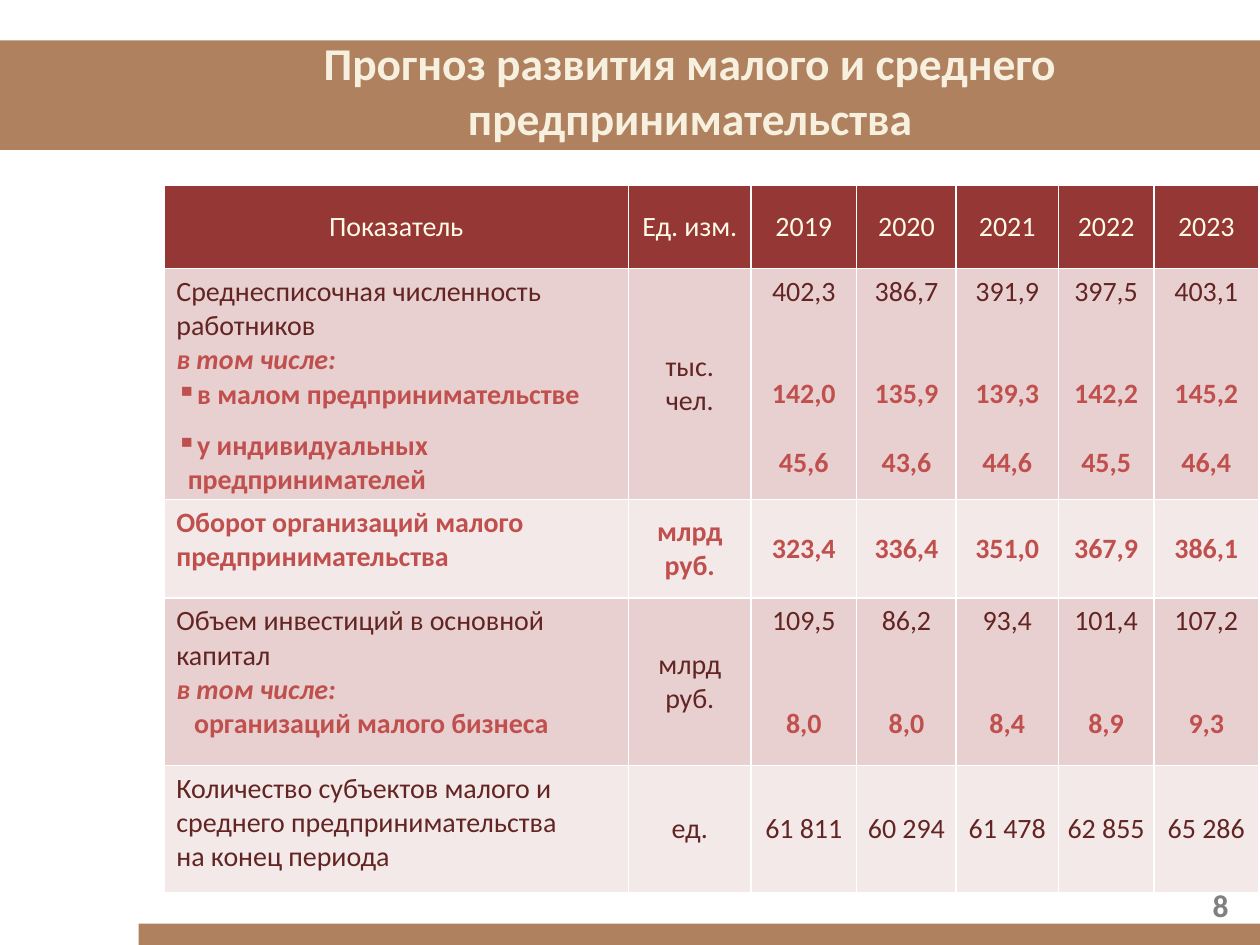
from lxml.etree import SubElement
from pptx import Presentation
from pptx.dml.color import RGBColor
from pptx.enum.shapes import MSO_SHAPE
from pptx.enum.text import MSO_ANCHOR, PP_ALIGN
from pptx.oxml.ns import qn
from pptx.util import Inches, Pt

SAND = RGBColor(0xAF, 0x81, 0x5F)
CREAM = RGBColor(0xF7, 0xF0, 0xDE)
GREY = RGBColor(0x80, 0x80, 0x80)
IVORY = RGBColor(0xFD, 0xFA, 0xE7)
MAROON = RGBColor(0x95, 0x37, 0x35)
DARK_RED = RGBColor(0x63, 0x25, 0x23)
RED = RGBColor(0xC0, 0x50, 0x4D)
ROSE = RGBColor(0xE8, 0xD0, 0xD0)
PALE_ROSE = RGBColor(0xF4, 0xE9, 0xE9)
WHITE = RGBColor(0xFF, 0xFF, 0xFF)

# The slide is a grid of 100 columns by 75 rows of equal squares.
SLIDE_WIDTH, SLIDE_HEIGHT = Inches(10), Inches(7.5)
GRID = SLIDE_WIDTH / 100

TITLE = {"size": Pt(26), "bold": True, "color": CREAM}
PAGE_NUMBER = {"size": Pt(18), "bold": True, "color": GREY}
HEADER = {"size": Pt(16), "color": IVORY}
TOTAL = {"size": Pt(16), "color": DARK_RED}
PART = {"size": Pt(16), "bold": True, "color": RED}
NOTE = PART | {"italic": True}

LINE = 19.5  # points taken by one line of table text
BULLET = {"left": 0.9, "first": -0.9, "bullet": "▪"}
COLUMN_WIDTHS = [36.9, 9.7, 8.4, 7.9, 8.1, 7.6, 8.3]
ROW_HEIGHTS = [6.6, 18.2, 7.8, 13.3, 10.1]
ROW_FILLS = [MAROON, ROSE, PALE_ROSE, ROSE, PALE_ROSE]
HEADINGS = ["Показатель", "Ед. изм.", "2019", "2020", "2021", "2022", "2023"]

# Label lines, unit, style of the unit, then lines of yearly values:
# (values, style, points of space before).
INDICATORS = [
    ([("Среднесписочная численность работников", TOTAL, {}),
      ("в том числе:", NOTE, {}),
      ("в малом предпринимательстве", PART, BULLET),
      ("у индивидуальных предпринимателей", PART, BULLET | {"before": LINE / 2})],
     "тыс. чел.", TOTAL,
     [(["402,3", "386,7", "391,9", "397,5", "403,1"], TOTAL, 0),
      (["142,0", "135,9", "139,3", "142,2", "145,2"], PART, 2 * LINE),
      (["45,6", "43,6", "44,6", "45,5", "46,4"], PART, LINE)]),
    ([("Оборот организаций малого предпринимательства", PART, {})],
     "млрд руб.", PART,
     [(["323,4", "336,4", "351,0", "367,9", "386,1"], PART, 0)]),
    ([("Объем инвестиций в основной капитал", TOTAL, {}),
      ("в том числе:", NOTE, {}),
      ("организаций малого бизнеса", PART, {"left": 1.4})],
     "млрд руб.", TOTAL,
     [(["109,5", "86,2", "93,4", "101,4", "107,2"], TOTAL, 0),
      (["8,0", "8,0", "8,4", "8,9", "9,3"], PART, 2 * LINE)]),
    ([("Количество субъектов малого и среднего предпринимательства", TOTAL, {}),
      ("на конец периода", TOTAL, {})],
     "ед.", TOTAL,
     [(["61 811", "60 294", "61 478", "62 855", "65 286"], TOTAL, 0)]),
]


def grid(*lengths):
    return [round(length * GRID) for length in lengths]


def add_band(page, *place):
    band = page.shapes.add_shape(MSO_SHAPE.RECTANGLE, *grid(*place))
    band.shadow.inherit = False
    band.fill.solid()
    band.fill.fore_color.rgb = SAND
    band.line.fill.background()


def write_paragraph(para, text, style, align, left=0, first=0, bullet=None, before=0):
    para.alignment = align
    if before:
        para.space_before = Pt(before)
    properties = para._p.get_or_add_pPr()
    if left:
        for name, length in zip(("marL", "indent"), grid(left, first)):
            properties.set(name, str(length))
    if bullet:
        SubElement(properties, qn("a:buChar")).set("char", bullet)
    span = para.add_run()
    span.text = text
    for name, value in ({"name": "Calibri"} | style).items():
        if name == "color":
            span.font.color.rgb = value
        else:
            setattr(span.font, name, value)


def write_lines(frame, lines, align):
    for index, (text, style, layout) in enumerate(lines):
        para = frame.add_paragraph() if index else frame.paragraphs[0]
        write_paragraph(para, text, style, align, **layout)


def add_text(page, place, text, style, align):
    frame = page.shapes.add_textbox(*grid(*place)).text_frame
    frame.word_wrap = True
    frame.vertical_anchor = MSO_ANCHOR.MIDDLE
    write_lines(frame, [(text, style, {})], align)


def paint_cell(cell, color):
    """Give the cell thin white borders and a plain fill."""
    properties = cell._tc.get_or_add_tcPr()
    for side in ("a:lnL", "a:lnR", "a:lnT", "a:lnB"):
        border = SubElement(properties, qn(side), w=str(Pt(1)))
        fill = SubElement(border, qn("a:solidFill"))
        SubElement(fill, qn("a:srgbClr"), val=str(WHITE))
    cell.fill.solid()
    cell.fill.fore_color.rgb = color


def fill_cell(cell, lines, middle=True, align=PP_ALIGN.CENTER):
    cell.vertical_anchor = MSO_ANCHOR.MIDDLE if middle else MSO_ANCHOR.TOP
    write_lines(cell.text_frame, lines, align)


def fill_indicator(cells, label, unit, unit_style, value_lines):
    fill_cell(cells[0], label, middle=False, align=PP_ALIGN.LEFT)
    fill_cell(cells[1], [(unit, unit_style, {})])
    for year, cell in enumerate(cells[2:]):
        lines = [(values[year], style, {"before": before})
                 for values, style, before in value_lines]
        fill_cell(cell, lines, middle=len(lines) == 1)


def add_forecast_table(page):
    place = grid(13, 14.7, sum(COLUMN_WIDTHS), sum(ROW_HEIGHTS))
    table = page.shapes.add_table(len(ROW_HEIGHTS), len(COLUMN_WIDTHS), *place).table
    for column, width in zip(table.columns, grid(*COLUMN_WIDTHS)):
        column.width = width
    for row, height, color in zip(table.rows, grid(*ROW_HEIGHTS), ROW_FILLS):
        row.height = height
        for cell in row.cells:
            paint_cell(cell, color)
    header, *body = [list(row.cells) for row in table.rows]
    for cell, heading in zip(header, HEADINGS):
        fill_cell(cell, [(heading, HEADER, {})])
    for cells, indicator in zip(body, INDICATORS):
        fill_indicator(cells, *indicator)
    for cell in body[-1][3:]:
        for side in ("left", "right", "top", "bottom"):
            setattr(cell, f"margin_{side}", 0)


def main():
    deck = Presentation()
    deck.slide_width, deck.slide_height = SLIDE_WIDTH, SLIDE_HEIGHT
    page = deck.slides.add_slide(deck.slide_layouts[6])
    add_band(page, 11, 73.3, 89.4, 2)
    add_band(page, 0, 3.2, 100.4, 8.7)
    add_text(page, (9.8, 1.3, 90, 11.7),
             "Прогноз развития малого и среднего предпринимательства",
             TITLE, PP_ALIGN.CENTER)
    add_text(page, (75.2, 69.8, 23.3, 4), "8", PAGE_NUMBER, PP_ALIGN.RIGHT)
    add_forecast_table(page)
    deck.save("out.pptx")


if __name__ == "__main__":
    main()
